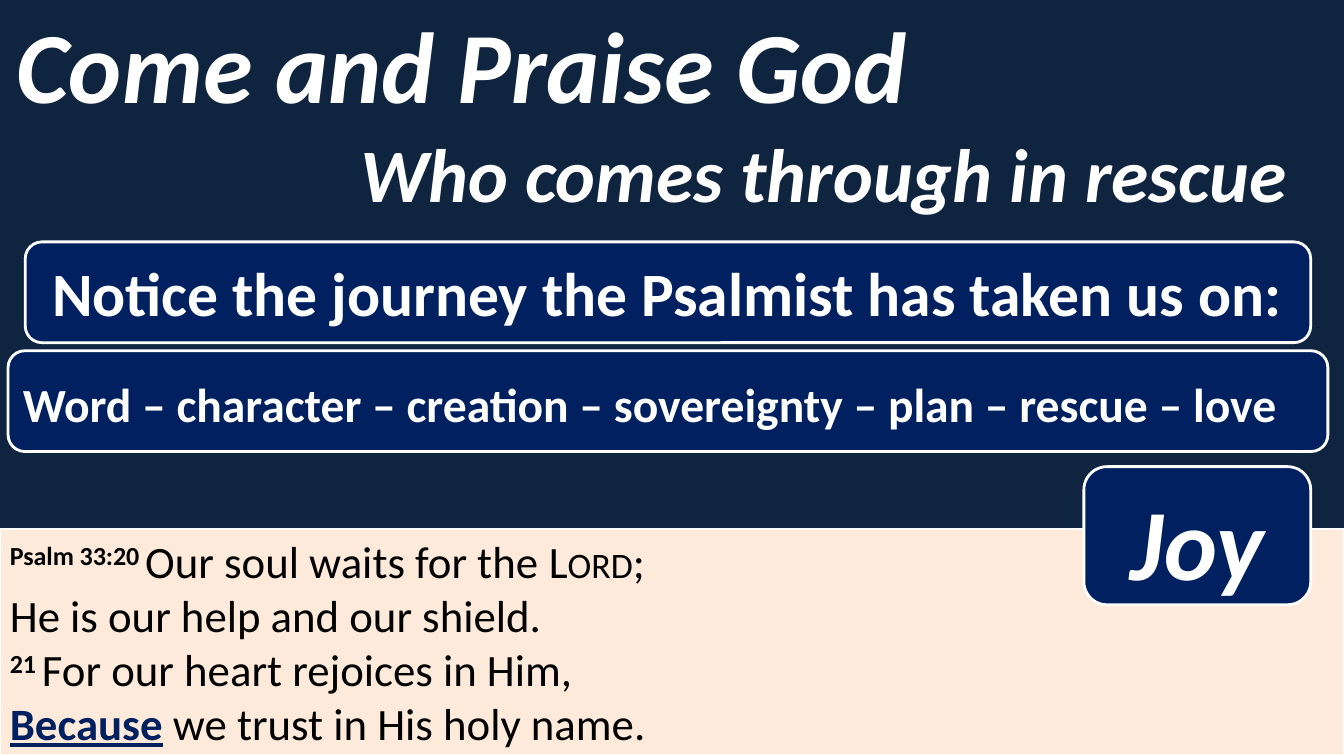
from dataclasses import dataclass, field
from typing import Any

from pptx import Presentation
from pptx.dml import color
from pptx.enum import shapes, text
from pptx import util as u

PX = 9144
WIDTH, HEIGHT = 1333, 750
NIGHT, NAVY, CREAM, WHITE, BLACK = "0F243E", "002060", "FDEADA", "FFFFFF", "000000"
MID, TOP = text.MSO_ANCHOR.MIDDLE, text.MSO_ANCHOR.TOP
CENTER, LEFT = text.PP_ALIGN.CENTER, text.PP_ALIGN.LEFT
RECT = shapes.MSO_SHAPE.RECTANGLE
ROUND = shapes.MSO_SHAPE.ROUNDED_RECTANGLE
CALLOUT = shapes.MSO_SHAPE.ROUNDED_RECTANGULAR_CALLOUT


@dataclass
class Span:
    words: str
    font: dict[str, Any] = field(default_factory=dict)
    attrs: dict[str, str] = field(default_factory=dict)


@dataclass
class Panel:
    box: tuple[int, int, int, int]
    paragraphs: list[list[Span]]
    size: int
    kind: Any = ROUND
    fill: str | None = NAVY
    line: float = 2
    ink: str = WHITE
    font: dict[str, Any] = field(default_factory=dict)
    layout: dict[str, Any] = field(default_factory=dict)
    anchor: Any = MID
    adjust: tuple[float, ...] = ()


def rgb(code: str) -> color.RGBColor:
    return color.RGBColor.from_string(code)


def apply(target: Any, values: dict[str, Any]) -> None:
    for name, value in values.items():
        setattr(target, name, value)


def add_span(p: Any, span: Span, panel: Panel) -> None:
    for i, part in enumerate(span.words.split("\n")):
        if i:
            p.add_line_break()
        if not part:
            continue
        r = p.add_run()
        r.text = part
        values = {"name": "Calibri", "size": u.Pt(panel.size)} | panel.font | span.font
        ink = values.pop("ink", panel.ink)
        apply(r.font, values)
        r.font.color.rgb = rgb(ink)
        for name, value in span.attrs.items():
            r._r.get_or_add_rPr().set(name, value)


def add_panel(s: Any, panel: Panel) -> None:
    box = [n * PX for n in panel.box]
    if panel.kind is None:
        sp = s.shapes.add_textbox(*box)
    else:
        sp = s.shapes.add_shape(panel.kind, *box)
        sp.shadow.inherit = False
        for i, value in enumerate(panel.adjust):
            sp.adjustments[i] = value
        if panel.fill:
            sp.fill.solid()
            sp.fill.fore_color.rgb = rgb(panel.fill)
            sp.line.color.rgb = rgb(WHITE)
            sp.line.width = u.Pt(panel.line)
        else:
            sp.fill.background()
            sp.line.fill.background()
    tf = sp.text_frame
    apply(tf, {"word_wrap": True, "vertical_anchor": panel.anchor})
    for i, spans in enumerate(panel.paragraphs):
        p = tf.add_paragraph() if i else tf.paragraphs[0]
        apply(p, {"alignment": CENTER} | panel.layout)
        for span in spans:
            add_span(p, span, panel)


BOLD = {"bold": True}
SLANTED = {"bold": True, "italic": True}
RAISED = {"baseline": "30000"}

PSALM = [
    [
        Span("Psalm 33:20 ", BOLD, RAISED),
        Span("Our soul waits for the "),
        Span("Lord", attrs={"cap": "small"}),
        Span(";\nHe is our help and our shield."),
    ],
    [
        Span("21 ", BOLD, RAISED),
        Span("For our heart rejoices in Him,\n"),
        Span("Because", {"bold": True, "underline": True, "ink": NAVY}),
        Span(" we trust in His holy name."),
    ],
]

PANELS = [
    Panel((0, 0, 917, 125), [[Span("Come and Praise God")]], 72, kind=None, font=SLANTED),
    Panel((0, 525, WIDTH, 224), PSALM, 32, kind=RECT, fill=CREAM, line=1.5, ink=BLACK,
          font={"bold": False}, layout={"alignment": LEFT}, anchor=TOP),
    Panel((342, 116, 992, 109), [[Span("Who comes through in rescue")]], 54, kind=CALLOUT,
          fill=None, font=SLANTED, layout={"alignment": LEFT}, adjust=(-0.22, 0.5, 0.17)),
    Panel((25, 240, 1275, 100), [[Span("Notice the journey the Psalmist has taken us on:")]], 44,
          font=BOLD),
    Panel((8, 348, 1309, 100),
          [[Span("Word – character – creation – sovereignty – plan – rescue – love")]], 34,
          font=BOLD, layout={"alignment": LEFT, "line_spacing": 1.07}),
    Panel((1075, 463, 225, 137), [[Span("Joy")]], 72, font=SLANTED,
          layout={"line_spacing": 1.07}),
]


def main() -> None:
    prs = Presentation()
    apply(prs, {"slide_width": WIDTH * PX, "slide_height": HEIGHT * PX})
    s = prs.slides.add_slide(prs.slide_layouts[6])
    s.background.fill.solid()
    s.background.fill.fore_color.rgb = rgb(NIGHT)
    for panel in PANELS:
        add_panel(s, panel)
    prs.save("out.pptx")


if __name__ == "__main__":
    main()
